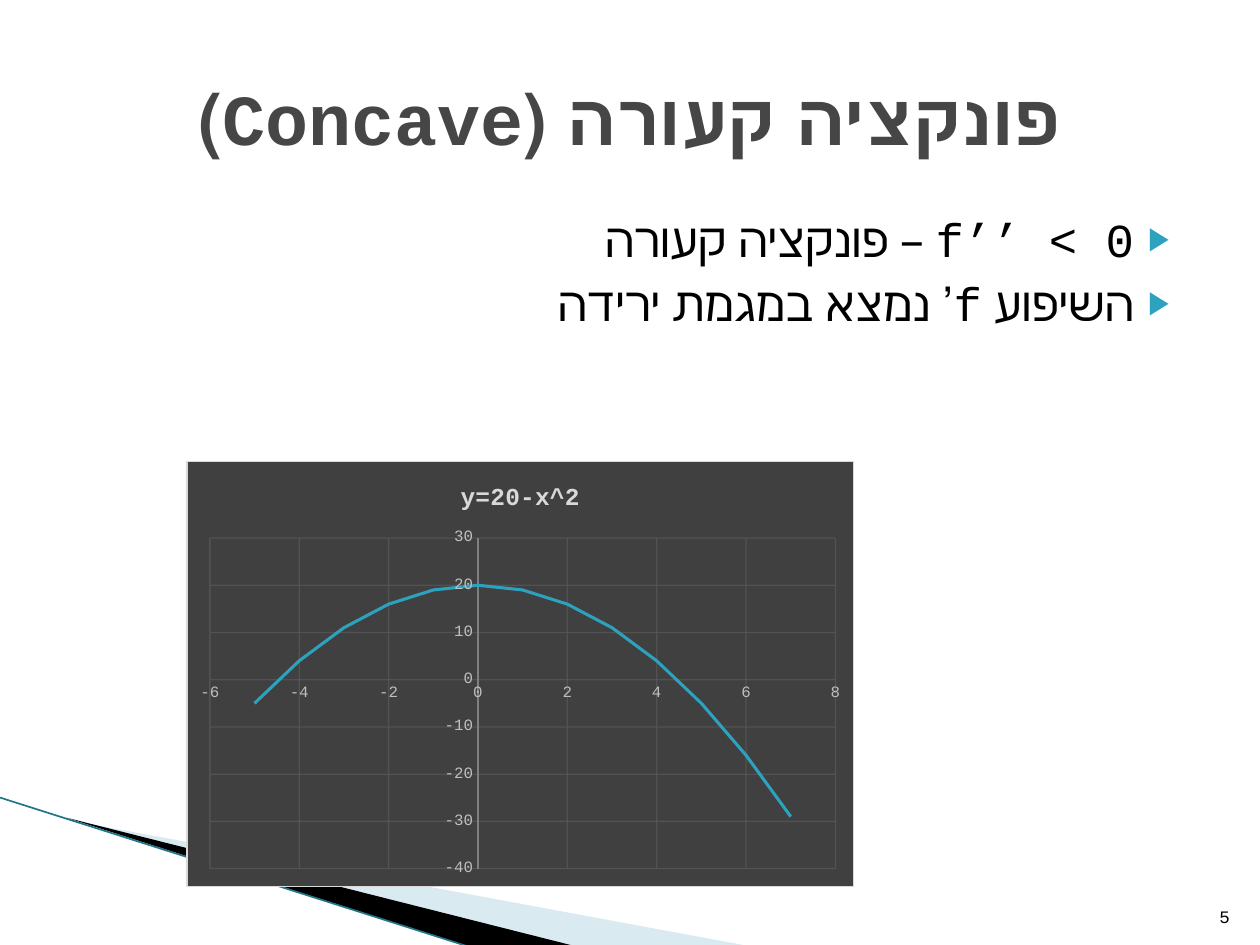
"""Build a slide on concave functions with a right-to-left list and a curve."""
import pptx
import pptx.chart.data
import pptx.dml.color
import pptx.enum.chart
import pptx.enum.text
import pptx.oxml
import pptx.oxml.ns
import pptx.util
from lxml import etree

Inches = pptx.util.Inches
Pt = pptx.util.Pt
qn = pptx.oxml.ns.qn
ALIGN = pptx.enum.text.PP_ALIGN
ANCHOR = pptx.enum.text.MSO_ANCHOR
FONT = "Courier New"
COLORS = {
    "title": "464646", "text": "000000", "accent": "2DA2BF",
    "pale": "A0CBDC", "edge": "1F768B", "panel": "404040",
    "border": "D9D9D9", "label": "BFBFBF", "axis": "808080", "grid": "595959",
}


def rgb(name):
    return pptx.dml.color.RGBColor.from_string(COLORS[name])


def set_font(font, size, color, bold=False):
    font.name, font.size, font.bold = FONT, Pt(size), bold
    font.color.rgb = rgb(color)


def set_alpha(fill, percent, parent):
    fill.solid()
    clr = next(parent.iter(qn("a:srgbClr")))
    etree.SubElement(clr, qn("a:alpha"), val=str(percent * 1000))


def set_line(line, color, width):
    line.color.rgb = rgb(color)
    line.width = Pt(width)


def add_text(p, text, size=27, color="text", bold=False, align=ALIGN.RIGHT,
             rtl=False, bullet=False, before=0):
    p.alignment = align
    p.space_before = Pt(before)
    pPr = p._p.get_or_add_pPr()
    if rtl:
        pPr.set("rtl", "1")
    pPr.set("marL", str(Inches(0.4) if bullet else 0))
    pPr.set("indent", str(Inches(-0.28) if bullet else 0))
    if bullet:
        clr = etree.SubElement(pPr, qn("a:buClr"))
        etree.SubElement(clr, qn("a:srgbClr"), val=COLORS["accent"])
        etree.SubElement(pPr, qn("a:buSzPct"), val="68000")
        etree.SubElement(pPr, qn("a:buChar"), char="▶")
    r = p.add_run()
    r.text = text
    set_font(r.font, size, color, bold)


def place(sp, left, top, width, height, anchor):
    sp.left, sp.top = Inches(left), Inches(top)
    sp.width, sp.height = Inches(width), Inches(height)
    tf = sp.text_frame
    tf.word_wrap = True
    tf.auto_size = pptx.enum.text.MSO_AUTO_SIZE.NONE
    tf.vertical_anchor = anchor
    sp.element.getparent().append(sp.element)
    return tf


def add_wedge(s, points, color, alpha=100):
    pts = [(Inches(x), Inches(y)) for x, y in points]
    fb = s.shapes.build_freeform(*pts[0])
    fb.add_line_segments(pts[1:])
    sp = fb.convert_to_shape()
    sp.shadow.inherit = False
    sp.fill.solid()
    sp.fill.fore_color.rgb = rgb(color)
    if alpha < 100:
        set_alpha(sp.fill, alpha, sp.element.spPr)
    sp.line.fill.background()


def add_line(s, start, end, color, width):
    cx = s.shapes.add_connector(pptx.enum.shapes.MSO_CONNECTOR.STRAIGHT,
                                *map(Inches, start + end))
    set_line(cx.line, color, width)
    etree.SubElement(cx.element.spPr, qn("a:effectLst"))


def format_axis(axis, low, high, step):
    axis.minimum_scale, axis.maximum_scale, axis.major_unit = low, high, step
    axis.major_tick_mark = pptx.enum.chart.XL_TICK_MARK.NONE
    axis.minor_tick_mark = pptx.enum.chart.XL_TICK_MARK.NONE
    axis.tick_label_position = pptx.enum.chart.XL_TICK_LABEL_POSITION.NEXT_TO_AXIS
    set_font(axis.tick_labels.font, 9, "label")
    axis.has_major_gridlines = True
    grid = axis.major_gridlines.format.line
    set_line(grid, "grid", 0.75)
    set_alpha(grid.fill, 75, axis.major_gridlines._xAx.find(qn("c:majorGridlines")))


def fill_panel(chart):
    spPr = pptx.oxml.parse_xml(
        f'<c:spPr {pptx.oxml.ns.nsdecls("c", "a")}>'
        f'<a:solidFill><a:srgbClr val="{COLORS["panel"]}"/></a:solidFill>'
        f'<a:ln w="{Pt(0.75)}"><a:solidFill><a:srgbClr val="{COLORS["border"]}"/>'
        '</a:solidFill></a:ln></c:spPr>')
    chart._chartSpace.find(qn("c:chart")).addnext(spPr)


def add_curve(s, name):
    data = pptx.chart.data.XyChartData()
    points = data.add_series(name)
    for x in range(-5, 8):
        points.add_data_point(x, 20 - x ** 2)
    chart = s.shapes.add_chart(
        pptx.enum.chart.XL_CHART_TYPE.XY_SCATTER_SMOOTH_NO_MARKERS,
        Inches(1.48), Inches(3.66), Inches(5.3), Inches(3.38), data).chart
    set_font(chart.font, 10, "text")
    fill_panel(chart)
    chart.has_legend = False
    chart.has_title = True
    p = chart.chart_title.text_frame.paragraphs[0]
    r = p.add_run()
    r.text = name
    set_font(r.font, 14, "border", bold=True)
    chart.chart_title.include_in_layout = False
    format_axis(chart.category_axis, -6, 8, 2)
    format_axis(chart.value_axis, -40, 30, 10)
    chart.category_axis.format.line.fill.background()
    set_line(chart.value_axis.format.line, "axis", 0.75)
    plot = chart.plots[0]
    plot.vary_by_categories = False
    series = plot.series[0]
    series.smooth = True
    series.marker.style = pptx.enum.chart.XL_MARKER_STYLE.NONE
    set_line(series.format.line, "accent", 1.75)


def main():
    prs = pptx.Presentation()
    prs.slide_width, prs.slide_height = Inches(10), Inches(7.5)
    s = prs.slides.add_slide(prs.slide_layouts[1])
    add_wedge(s, [(0.55, 6.51), (5.95, 7.51), (4.56, 7.51)], "pale", 40)
    add_wedge(s, [(0.53, 6.49), (4.57, 7.51), (3.72, 7.51)], "text")
    add_line(s, (0, 6.33), (3.71, 7.51), "edge", 0.95)

    tf = place(s.shapes.title, 0.5, 0.3, 9, 1.25, ANCHOR.MIDDLE)
    add_text(tf.paragraphs[0], "פונקציה קעורה (Concave)", size=41,
             color="title", bold=True, align=ALIGN.CENTER, rtl=True)

    tf = place(s.placeholders[1], 0.5, 1.62, 9, 4.95, ANCHOR.TOP)
    add_text(tf.paragraphs[0], "f’’ < 0 – פונקציה קעורה", rtl=True, bullet=True)
    add_text(tf.add_paragraph(), "השיפוע f’ נמצא במגמת ירידה", rtl=True,
             bullet=True, before=4)

    add_curve(s, "y=20-x^2")
    box = s.shapes.add_textbox(0, 0, 0, 0)
    tf = place(box, 9.46, 7.01, 0.4, 0.4, ANCHOR.BOTTOM)
    add_text(tf.paragraphs[0], "5", size=10)
    prs.save("out.pptx")


if __name__ == "__main__":
    main()
